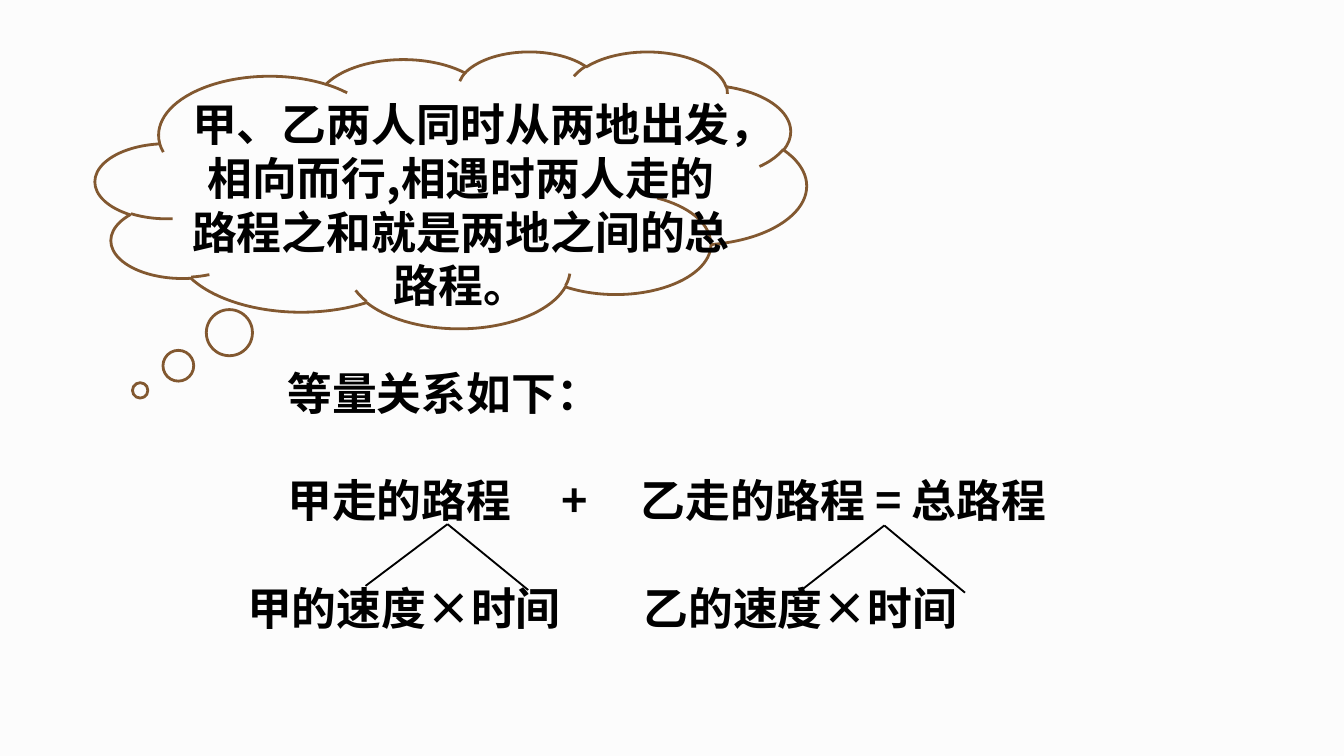
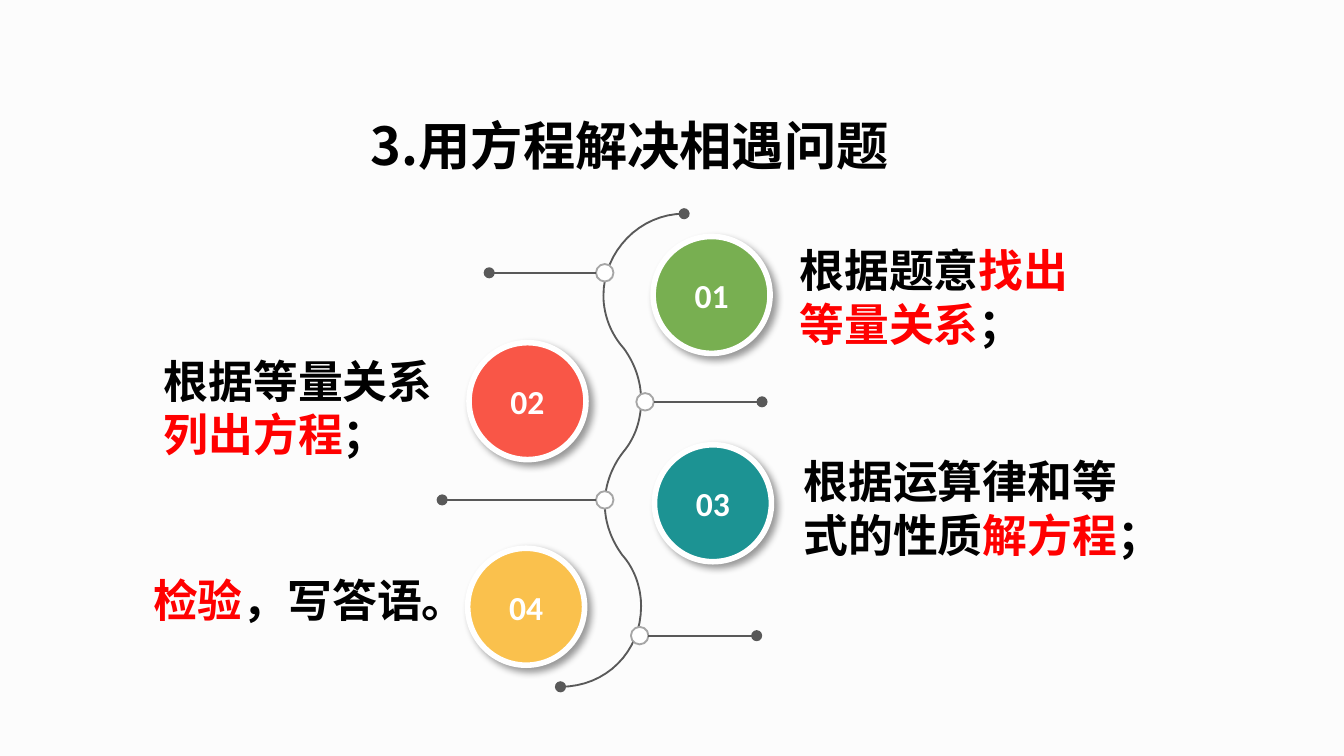
import math

import lxml.etree
import pptx
import pptx.dml.color
import pptx.enum.shapes
import pptx.enum.text
import pptx.oxml.ns
import pptx.util

Inches = pptx.util.Inches
Pt = pptx.util.Pt
qn = pptx.oxml.ns.qn
SHAPES = pptx.enum.shapes.MSO_SHAPE
ALIGN = pptx.enum.text.PP_ALIGN
ANCHOR = pptx.enum.text.MSO_ANCHOR

SLIDE_WIDTH = 10
SLIDE_HEIGHT = SLIDE_WIDTH * 9 / 16
CHINESE_FONT = "Noto Sans CJK SC"
NUMBER_FONT = "Calibri"
BODY_SIZE = 24
LINE_FACTOR = 1.2

COLORS = {
    "background": "FCFCFC", "text": "000000", "accent": "FF0000", "white": "FFFFFF",
    "cloud": "825830", "path": "595959", "joint": "A6A6A6",
    "green": "78AF51", "red": "F95647", "teal": "1C9393", "yellow": "FAC14D",
}

# Meeting problem: statement and equal quantities
STATEMENT = "甲、乙两人同时从两地出发，相向而行,相遇时两人走的路程之和就是两地之间的总路程。"
TAB_INDENT, TAB_PLUS, TAB_SECOND, TAB_PRODUCT = 0.3, 2.34, 2.93, 2.95
RELATION_ROWS = [
    ("\t等量关系如下：", [TAB_INDENT]),
    ("\t甲走的路程\t+\t乙走的路程 = 总路程", [TAB_INDENT, TAB_PLUS, TAB_SECOND]),
    ("甲的速度×时间\t乙的速度×时间", [TAB_PRODUCT]),
]
# Each branch: apex, then the ends of its two legs
BRANCHES = [
    ((3.33, 3.9), [(2.72, 4.36), (3.93, 4.39)]),
    ((6.58, 3.91), [(5.9, 4.44), (7.18, 4.41)]),
]

# Four steps: number, colour, circle corner, text box, coloured runs
TITLE = "3.用方程解决相遇问题"
CIRCLE = 0.87
STEPS = [
    ("01", "green", (4.86, 1.76), (5.85, 1.76, 2.27, 0.91),
     [("根据题意", "text"), ("找出等量关系", "accent"), ("；", "text")]),
    ("02", "red", (3.49, 2.55), (1.12, 2.58, 2.27, 0.91),
     [("根据等量关系", "text"), ("列出方程", "accent"), ("；", "text")]),
    ("03", "teal", (4.87, 3.31), (5.88, 3.33, 2.61, 0.91),
     [("根据运算律和等式的性质", "text"), ("解方程", "accent"), ("；", "text")]),
    ("04", "yellow", (3.48, 4.08), (1.04, 4.21, 2.61, 0.5),
     [("检验", "accent"), ("，写答语。", "text")]),
]
# Winding path: start point, then two control points and an end for each curve
PATH_START = (4.17, 5.11)
PATH_CURVES = [
    ((4.51, 5.11), (4.77, 4.85), (4.77, 4.51)),
    ((4.77, 4.37), (4.72, 4.23), (4.63, 4.13)),
    ((4.55, 4.02), (4.5, 3.89), (4.5, 3.75)),
    ((4.5, 3.6), (4.56, 3.46), (4.64, 3.36)),
    ((4.73, 3.25), (4.77, 3.12), (4.77, 2.98)),
    ((4.77, 2.83), (4.72, 2.7), (4.64, 2.59)),
    ((4.55, 2.49), (4.49, 2.35), (4.49, 2.2)),
    ((4.49, 1.87), (4.76, 1.59), (5.09, 1.59)),
]
CURVE_STEPS = 16
JOINT = 0.13
# Side lines: joint centre x, far end x, y
SIDE_LINES = [(4.5, 3.64, 2.03), (4.8, 5.67, 2.99), (4.5, 3.29, 3.72), (4.76, 5.63, 4.73)]


def rgb(name):
    return pptx.dml.color.RGBColor.from_string(COLORS[name])


def add_run(paragraph, text, color="text", size=BODY_SIZE, font=CHINESE_FONT):
    run = paragraph.add_run()
    run.text = text
    run.font.size = Pt(size)
    run.font.bold = True
    run.font.name = font
    run.font.color.rgb = rgb(color)
    if font == CHINESE_FONT:
        east_asian = lxml.etree.SubElement(run.font._element, qn("a:ea"))
        east_asian.set("typeface", font)


def format_paragraph(paragraph, align=ALIGN.LEFT, size=BODY_SIZE):
    paragraph.alignment = align
    paragraph.line_spacing = Pt(size * LINE_FACTOR)


def add_text(slide, box, runs, align=ALIGN.LEFT):
    frame = slide.shapes.add_textbox(*map(Inches, box)).text_frame
    frame.word_wrap = True
    format_paragraph(frame.paragraphs[0], align)
    for text, color in runs:
        add_run(frame.paragraphs[0], text, color)


def add_tabs(paragraph, positions):
    tab_list = lxml.etree.SubElement(paragraph._p.get_or_add_pPr(), qn("a:tabLst"))
    for position in positions:
        tab = lxml.etree.SubElement(tab_list, qn("a:tab"))
        tab.set("pos", str(Inches(position)))
        tab.set("algn", "l")


def set_line(shape, color, width):
    shape.line.color.rgb = rgb(color)
    shape.line.width = Pt(width)


def add_oval_ends(shape, *ends):
    line = shape._element.spPr.find(qn("a:ln"))
    for end in ends:
        lxml.etree.SubElement(line, qn(f"a:{end}")).set("type", "oval")


def add_line(slide, start, end, color):
    connector = slide.shapes.add_connector(
        pptx.enum.shapes.MSO_CONNECTOR.STRAIGHT, *map(Inches, (*start, *end)))
    set_line(connector, color, 1)
    lxml.etree.SubElement(connector._element.spPr, qn("a:effectLst"))
    return connector


def add_outlined(slide, kind, box, line, width, fill=None):
    shape = slide.shapes.add_shape(kind, *map(Inches, box))
    shape.shadow.inherit = False
    if fill:
        shape.fill.solid()
        shape.fill.fore_color.rgb = rgb(fill)
    else:
        shape.fill.background()
    set_line(shape, line, width)
    return shape


def add_drop_shadow(shape):
    effects = shape._element.spPr.find(qn("a:effectLst"))
    shadow = lxml.etree.SubElement(effects, qn("a:outerShdw"))
    for name, value in (("blurRad", Pt(4)), ("dist", Pt(3)), ("dir", 45 * 60000),
                        ("algn", "tl"), ("rotWithShape", 0)):
        shadow.set(name, str(value))
    color = lxml.etree.SubElement(shadow, qn("a:srgbClr"))
    color.set("val", COLORS["text"])
    lxml.etree.SubElement(color, qn("a:alpha")).set("val", "40000")


def add_number_circle(slide, number, color, corner):
    circle = add_outlined(slide, SHAPES.OVAL, (*corner, CIRCLE, CIRCLE), "white", 3, color)
    add_drop_shadow(circle)
    frame = circle.text_frame
    frame.margin_left = frame.margin_right = 0
    frame.margin_top = frame.margin_bottom = Inches(0.04)
    frame.vertical_anchor = ANCHOR.MIDDLE
    frame.paragraphs[0].alignment = ALIGN.CENTER
    add_run(frame.paragraphs[0], number, "white", 18, NUMBER_FONT)


def curve_points(start, curves):
    """Return points along a chain of cubic curves."""
    points = [start]
    for first, second, end in curves:
        for step in range(1, CURVE_STEPS + 1):
            t = step / CURVE_STEPS
            points.append(tuple(
                (1 - t) ** 3 * a + 3 * (1 - t) ** 2 * t * b + 3 * (1 - t) * t ** 2 * c + t ** 3 * d
                for a, b, c, d in zip(start, first, second, end)))
        start = end
    return points


def add_winding_path(slide):
    points = [(Inches(x), Inches(y)) for x, y in curve_points(PATH_START, PATH_CURVES)]
    builder = slide.shapes.build_freeform(*points[0])
    builder.add_line_segments(points[1:], close=False)
    path = builder.convert_to_shape()
    path.shadow.inherit = False
    path.fill.background()
    set_line(path, "path", 1)
    add_oval_ends(path, "headEnd", "tailEnd")


def build_relation_slide(presentation):
    slide = presentation.slides.add_slide(presentation.slide_layouts[6])
    cloud = add_outlined(slide, SHAPES.CLOUD_CALLOUT, (0.71, 0.38, 5.29, 2.06), "cloud", 1.5)
    cloud.adjustments[0] = -0.437
    cloud.adjustments[1] = 0.726
    add_text(slide, (1.3, 0.67, 4.26, 1.72), [(STATEMENT, "text")], ALIGN.CENTER)

    frame = slide.shapes.add_textbox(*map(Inches, (1.74, 2.67, 7.33, 2.12))).text_frame
    frame.word_wrap = True
    for index, (text, tabs) in enumerate(RELATION_ROWS):
        paragraph = frame.add_paragraph() if index else frame.paragraphs[0]
        format_paragraph(paragraph)
        if index:
            paragraph.space_before = Pt(BODY_SIZE * LINE_FACTOR)
        add_tabs(paragraph, tabs)
        add_run(paragraph, text)

    for apex, ends in BRANCHES:
        for end in ends:
            add_line(slide, apex, end, "text")


def build_steps_slide(presentation):
    slide = presentation.slides.add_slide(presentation.slide_layouts[5])
    title = slide.shapes.title
    title.left, title.top, title.width, title.height = map(Inches, (2.66, 0.79, 4.15, 0.57))
    frame = title.text_frame
    frame.word_wrap = False
    frame.auto_size = pptx.enum.text.MSO_AUTO_SIZE.NONE
    frame.vertical_anchor = ANCHOR.TOP
    format_paragraph(frame.paragraphs[0], size=28)
    add_run(frame.paragraphs[0], TITLE, size=28)

    for number, color, corner, _, _ in reversed(STEPS):
        add_number_circle(slide, number, color, corner)
    add_winding_path(slide)
    for center, far_end, y in SIDE_LINES:
        add_outlined(slide, SHAPES.OVAL, (center - JOINT / 2, y - JOINT / 2, JOINT, JOINT),
                     "joint", 1, "white")
        edge = center + math.copysign(JOINT / 2, far_end - center)
        add_oval_ends(add_line(slide, (far_end, y), (edge, y), "path"), "headEnd")
    for _, _, _, box, runs in STEPS:
        add_text(slide, box, runs)


def main():
    presentation = pptx.Presentation()
    presentation.slide_width = Inches(SLIDE_WIDTH)
    presentation.slide_height = Inches(SLIDE_HEIGHT)
    background = presentation.slide_master.background.fill
    background.solid()
    background.fore_color.rgb = rgb("background")
    build_relation_slide(presentation)
    build_steps_slide(presentation)
    presentation.save("out.pptx")


if __name__ == "__main__":
    main()
